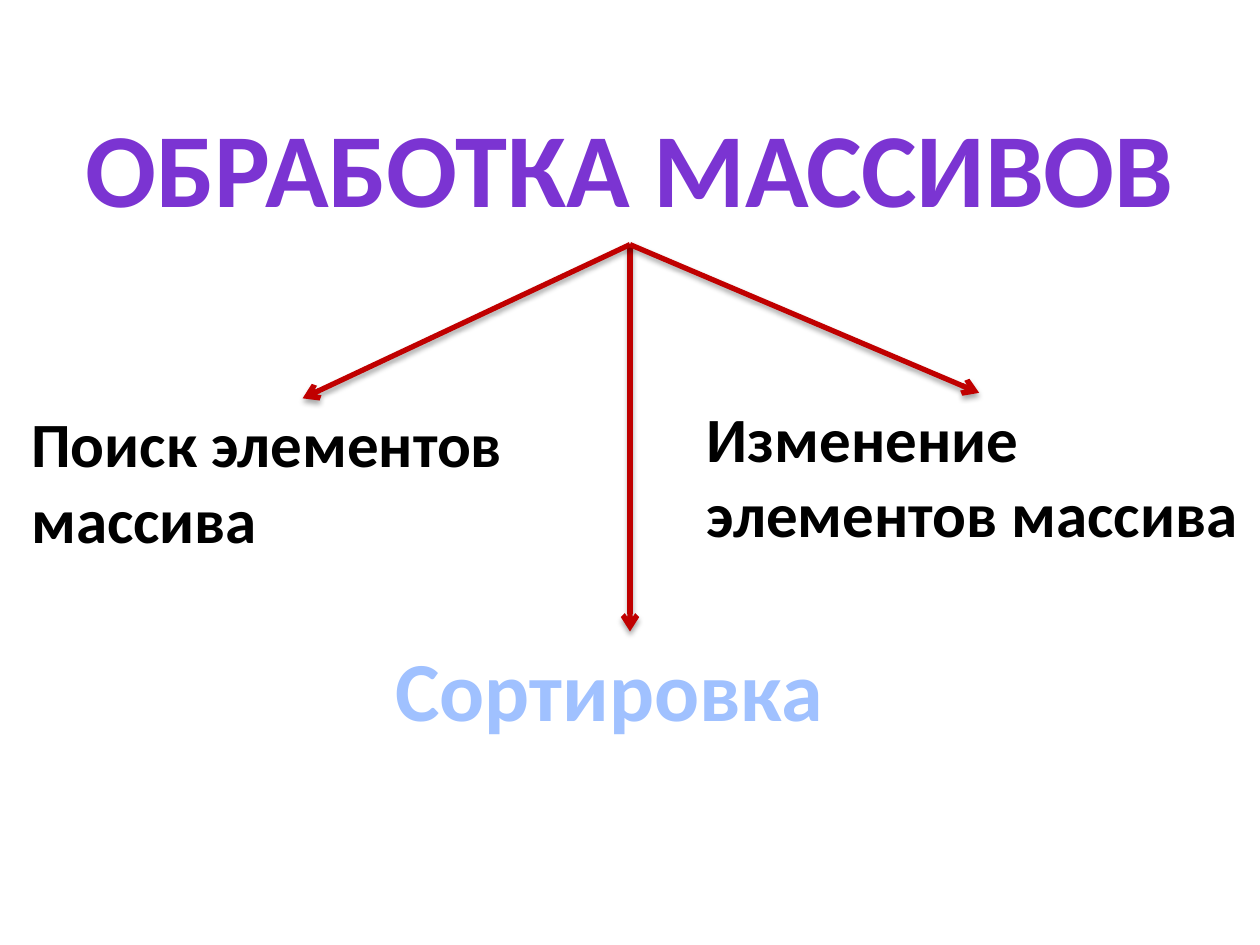
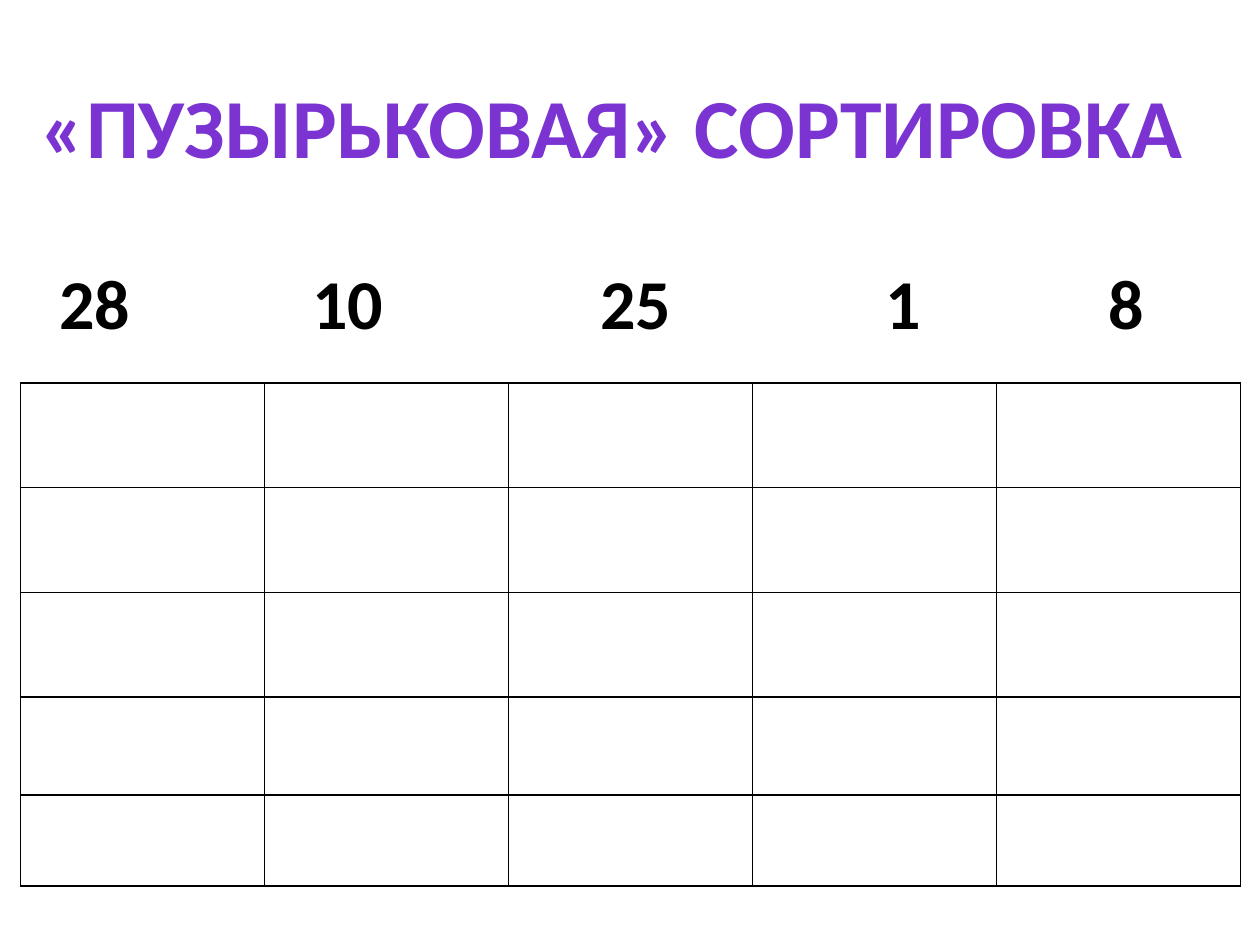
"""Two slides on array processing: the kinds of task and a bubble sort worksheet."""
import dataclasses

import lxml.etree
import pptx
import pptx.dml.color
import pptx.enum.shapes
import pptx.enum.text
import pptx.oxml
import pptx.oxml.ns
import pptx.util

Cm = pptx.util.Cm
Pt = pptx.util.Pt
RGB = pptx.dml.color.RGBColor.from_string
qn = pptx.oxml.ns.qn
Align = pptx.enum.text.PP_ALIGN
Anchor = pptx.enum.text.MSO_ANCHOR


@dataclasses.dataclass(frozen=True)
class Theme:
    font: str = "Calibri"
    heading: str = "7B34D2"
    accent: str = "A0C1FF"
    body: str = "000000"
    arrow: str = "C00000"
    heading_size: int = 60
    subheading_size: int = 48
    number_size: int = 40
    body_size: int = 36
    arrow_width: int = 3
    grid_width: int = 1


theme = Theme()


def add_text(slide, text, box, size, color, align=Align.LEFT, anchor=Anchor.TOP):
    frame = slide.shapes.add_textbox(*map(Cm, box)).text_frame
    frame.word_wrap = True
    frame.vertical_anchor = anchor
    frame.text = text
    paragraph = frame.paragraphs[0]
    paragraph.alignment = align
    font = paragraph.runs[0].font
    font.name, font.size, font.bold = theme.font, Pt(size), True
    font.color.rgb = RGB(color)
    return paragraph


def add_arrow(slide, start, end):
    arrow = slide.shapes.add_connector(
        pptx.enum.shapes.MSO_CONNECTOR.STRAIGHT, *map(Cm, start + end))
    arrow.line.color.rgb = RGB(theme.arrow)
    arrow.line.width = Pt(theme.arrow_width)
    properties = arrow._element.spPr
    line = properties.find(qn("a:ln"))
    lxml.etree.SubElement(line, qn("a:tailEnd"), type="arrow")
    effects = lxml.etree.SubElement(properties, qn("a:effectLst"))
    shadow = lxml.etree.SubElement(
        effects, qn("a:outerShdw"), blurRad=str(Pt(3.1)), dist=str(Pt(1.8)),
        dir="5400000", rotWithShape="0")
    shade = lxml.etree.SubElement(shadow, qn("a:srgbClr"), val="000000")
    lxml.etree.SubElement(shade, qn("a:alpha"), val="35000")


deck = pptx.Presentation()
deck.slide_width, deck.slide_height = Cm(25.4), Cm(19.05)
blank = deck.slide_layouts[6]

overview = deck.slides.add_slide(blank)
add_text(overview, "ОБРАБОТКА МАССИВОВ", (1.27, 1.75, 22.86, 3.18),
         theme.heading_size, theme.heading, Align.CENTER, Anchor.MIDDLE)
tasks = [
    ("Поиск элементов массива", (0.38, 8.03, 11.4, 3.33), theme.body_size, theme.body),
    ("Изменение элементов массива", (14, 7.92, 11.5, 3.33), theme.body_size, theme.body),
    ("Сортировка", (7.72, 12.73, 9.98, 2.31), theme.subheading_size, theme.accent),
]
for task, box, size, color in tasks:
    add_text(overview, task, box, size, color)

arrow_origin = (12.7, 4.93)
for arrow_tip in [(12.7, 12.73), (6.1, 8.03), (19.74, 7.92)]:
    add_arrow(overview, arrow_origin, arrow_tip)

bubble_sort = deck.slides.add_slide(blank)
add_text(bubble_sort, "«ПУЗЫРЬКОВАЯ» СОРТИРОВКА", (-0.71, 1.37, 26.11, 2.31),
         theme.subheading_size, theme.heading, Align.CENTER, Anchor.MIDDLE)

column_count = 5
row_heights = [2.11, 2.11, 2.11, 1.98, 1.83]
steps = bubble_sort.shapes.add_table(
    len(row_heights), column_count,
    Cm(0.41), Cm(7.72), Cm(24.6), Cm(sum(row_heights))).table
steps.first_row = steps.horz_banding = False
for row, height in zip(steps.rows, row_heights):
    row.height = Cm(height)
for cell in steps.iter_cells():
    cell.fill.background()
    cell_properties = cell._tc.get_or_add_tcPr()
    for position, side in enumerate(("lnL", "lnR", "lnT", "lnB")):
        border = lxml.etree.Element(qn("a:" + side), w=str(Pt(theme.grid_width)))
        ink = lxml.etree.SubElement(border, qn("a:solidFill"))
        lxml.etree.SubElement(ink, qn("a:srgbClr"), val=theme.body)
        cell_properties.insert(position, border)

number_stops = {"28": 0.65, "10": 5.75, "25": 11.55, "1": 17.3, "8": 21.8}
numbers = add_text(bubble_sort, "".join("\t" + number for number in number_stops),
                   (0.3, 5.11, 25.1, 1.96), theme.number_size, theme.body)
tab_list = lxml.etree.SubElement(numbers._p.get_or_add_pPr(), qn("a:tabLst"))
for stop in number_stops.values():
    lxml.etree.SubElement(tab_list, qn("a:tab"), pos=str(Cm(stop)), algn="l")

deck.save("out.pptx")
